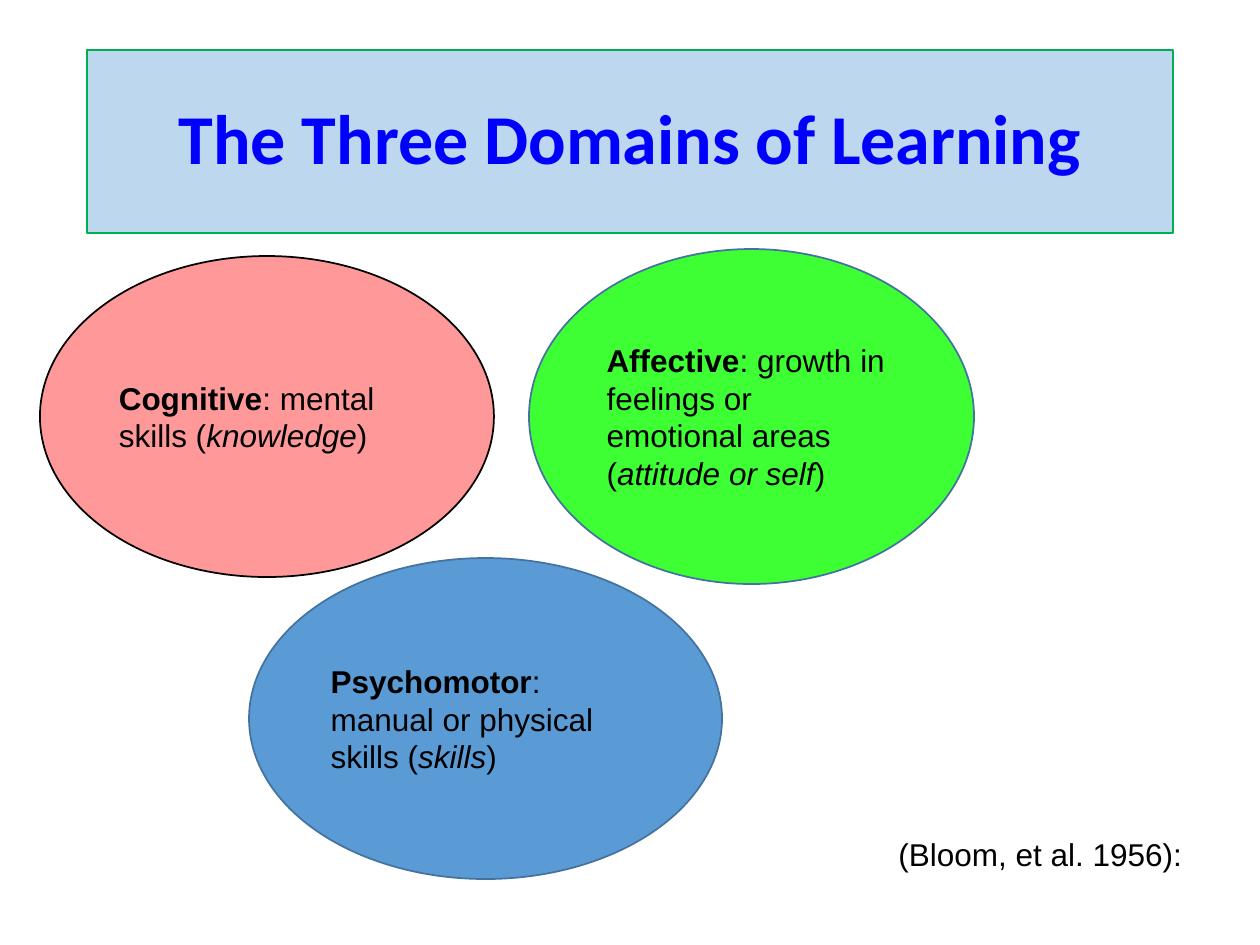
from pptx import Presentation
from pptx.dml.color import RGBColor
from pptx.enum.shapes import MSO_SHAPE
from pptx.enum.text import MSO_ANCHOR, MSO_AUTO_SIZE, PP_ALIGN
from pptx.util import Pt

EMU_PER_PX = 914400 / 126
BLACK = RGBColor(0x00, 0x00, 0x00)
TITLE_BLUE = RGBColor(0x00, 0x00, 0xFF)
PALE_BLUE = RGBColor(0xBD, 0xD7, 0xEE)
EDGE_GREEN = RGBColor(0x00, 0xB0, 0x50)
PINK = RGBColor(0xFF, 0x99, 0x99)
LIME = RGBColor(0x3D, 0xFF, 0x33)
BLUE = RGBColor(0x5B, 0x9B, 0xD5)
EDGE_BLUE = RGBColor(0x43, 0x73, 0x9E)


def px(*lengths):
    return [round(length * EMU_PER_PX) for length in lengths]


class DomainsPage:
    """Holds the text style and the current slide, and draws its elements."""

    font = "Arial"
    size = 18

    def __init__(self, deck):
        self.page = deck.slides.add_slide(deck.slide_layouts[6])

    def span(self, para, text, bold=False, italic=False, font=font, size=size, color=BLACK):
        span = para.add_run()
        span.text = text
        span.font.name = font
        span.font.size = Pt(size)
        span.font.bold = bold
        span.font.italic = italic
        span.font.color.rgb = color

    def shape(self, kind, place, fill, edge, weight, align):
        shape = self.page.shapes.add_shape(kind, *px(*place))
        shape.shadow.inherit = False
        shape.fill.solid()
        shape.fill.fore_color.rgb = fill
        shape.line.color.rgb = edge
        shape.line.width = Pt(weight)
        frame = shape.text_frame
        frame.word_wrap = True
        frame.vertical_anchor = MSO_ANCHOR.MIDDLE
        para = frame.paragraphs[0]
        para.alignment = align
        return para

    def title(self, place, text):
        para = self.shape(MSO_SHAPE.RECTANGLE, place, PALE_BLUE, EDGE_GREEN, 0.75, PP_ALIGN.CENTER)
        para.line_spacing = 0.9
        self.span(para, text, bold=True, font="Calibri", size=40, color=TITLE_BLUE)

    def domain(self, place, fill, edge, name, meaning, aspect):
        para = self.shape(MSO_SHAPE.OVAL, place, fill, edge, 1, PP_ALIGN.LEFT)
        self.span(para, name, bold=True)
        self.span(para, f": {meaning} (")
        self.span(para, aspect, italic=True)
        self.span(para, ")")

    def citation(self, place, text):
        box = self.page.shapes.add_textbox(*px(*place))
        box.text_frame.word_wrap = False
        box.text_frame.auto_size = MSO_AUTO_SIZE.SHAPE_TO_FIT_TEXT
        self.span(box.text_frame.paragraphs[0], text)


def main():
    deck = Presentation()
    deck.slide_width, deck.slide_height = px(1260, 945)
    page = DomainsPage(deck)
    page.title((87, 50, 1086, 183), "The Three Domains of Learning")
    domains = [
        ((40, 256, 454, 321), PINK, BLACK, "Cognitive", "mental skills", "knowledge"),
        ((529, 249, 445, 335), LIME, EDGE_BLUE, "Affective",
         "growth in feelings or emotional areas", "attitude or self"),
        ((249, 558, 473, 321), BLUE, EDGE_BLUE, "Psychomotor",
         "manual or physical skills", "skills"),
    ]
    for domain in domains:
        page.domain(*domain)
    page.citation((886, 829, 311, 50), "(Bloom, et al. 1956):")
    deck.save("out.pptx")


if __name__ == "__main__":
    main()
